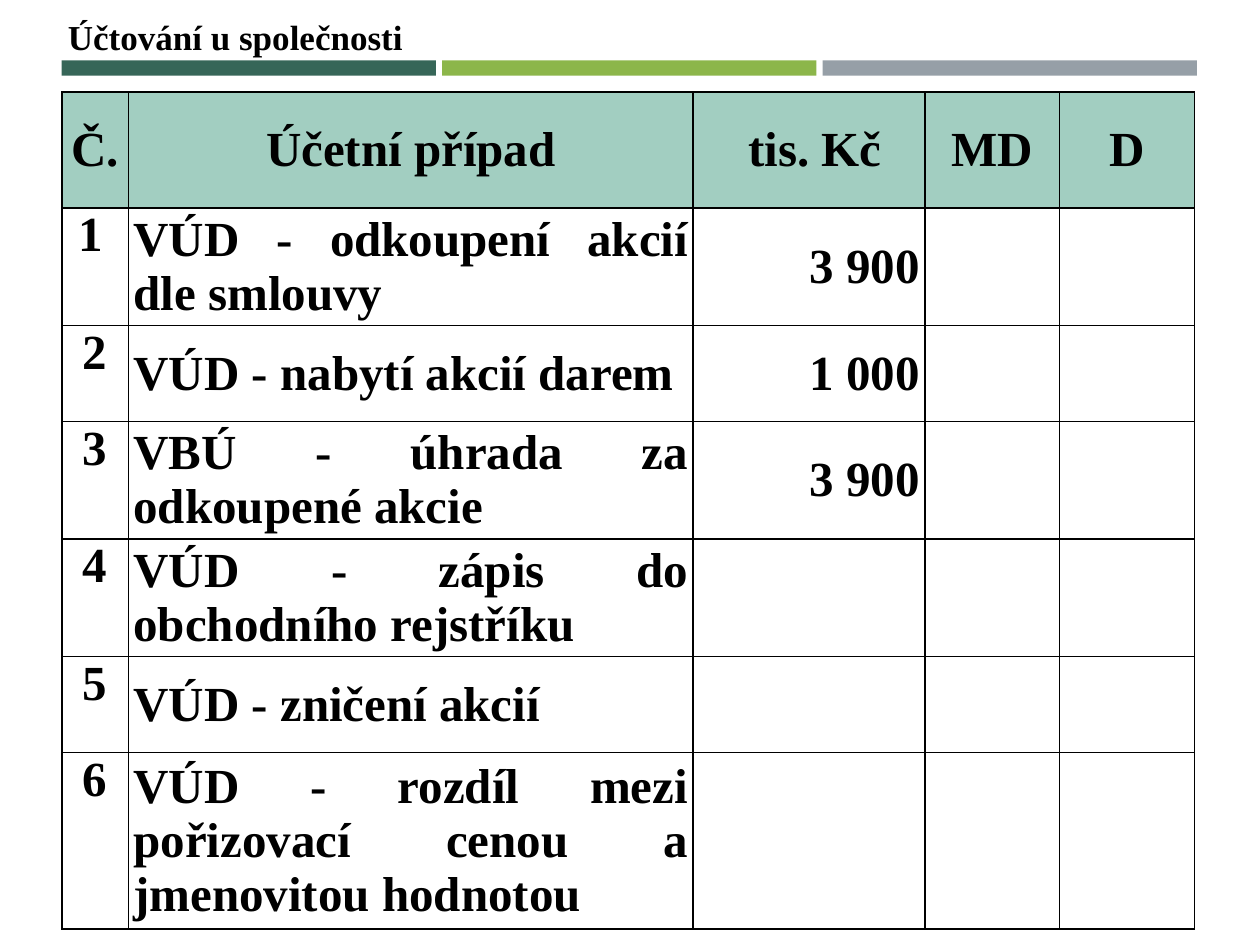
from lxml import etree
from pptx import Presentation
from pptx.dml.color import RGBColor
from pptx.enum.shapes import MSO_SHAPE
from pptx.enum.text import MSO_ANCHOR, MSO_AUTO_SIZE, PP_ALIGN
from pptx.oxml.ns import qn
from pptx.util import Inches, Pt

RECTANGLE = MSO_SHAPE.RECTANGLE
TOP, MIDDLE = MSO_ANCHOR.TOP, MSO_ANCHOR.MIDDLE
LEFT, CENTER, RIGHT, JUSTIFY = (
    PP_ALIGN.LEFT, PP_ALIGN.CENTER, PP_ALIGN.RIGHT, PP_ALIGN.JUSTIFY)
FIT_SHAPE = MSO_AUTO_SIZE.SHAPE_TO_FIT_TEXT

WIDTH, HEIGHT = 10, 7.5
FONT, BLACK, HEADER_FILL = "Times New Roman", "000000", "A2CEC1"
BAR_COLORS = ["366658", "8CB64A", "969FA7"]
MARGIN = 0.49

COLUMN_WIDTHS = [0.53, 4.48, 1.84, 1.07, 1.07]
ROW_HEIGHTS = [0.92, 0.93, 0.76, 0.93, 0.93, 0.76, 1.4]
HEADER = ["Č.", "Účetní případ", " tis. Kč", "MD", "D"]
ENTRIES = [
    [" 1", "VÚD - odkoupení akcií dle smlouvy", "3 900", "", ""],
    ["2", "VÚD - nabytí akcií darem", "1 000", "", ""],
    ["3", "VBÚ - úhrada za odkoupené akcie", "3 900", "", ""],
    ["4", "VÚD - zápis do obchodního rejstříku", "", "", ""],
    ["5", "VÚD - zničení akcií", "", "", ""],
    ["6", "VÚD - rozdíl mezi pořizovací cenou a jmenovitou hodnotou", "", "", ""],
]
BODY_ALIGNMENTS = [CENTER, JUSTIFY, RIGHT, CENTER, CENTER]


def color(value):
    return RGBColor.from_string(value)


class SlideBuilder:
    """Holds the text style and the current slide; lengths are shares of the slide."""

    def __init__(self, presentation):
        self.presentation = presentation
        self.slide = presentation.slides.add_slide(presentation.slide_layouts[6])

    def box(self, left, top, width, height):
        across, down = self.presentation.slide_width, self.presentation.slide_height
        return (int(left * across), int(top * down),
                int(width * across), int(height * down))

    def add_text(self, paragraph, text, size, alignment=LEFT):
        paragraph.alignment = alignment
        run = paragraph.add_run()
        run.text = text
        run.font.name = FONT
        run.font.size = Pt(size)
        run.font.bold = True
        run.font.color.rgb = color(BLACK)

    def bar(self, left, top, width, height, fill):
        shape = self.slide.shapes.add_shape(RECTANGLE, *self.box(left, top, width, height))
        shape.shadow.inherit = False
        shape.fill.solid()
        shape.fill.fore_color.rgb = color(fill)
        shape.line.fill.background()

    def title(self, left, top, width, height, text):
        shape = self.slide.shapes.add_textbox(*self.box(left, top, width, height))
        frame = shape.text_frame
        frame.word_wrap = False
        frame.auto_size = FIT_SHAPE
        self.add_text(frame.paragraphs[0], text, 20)

    def table(self, left, top, widths, heights):
        bounds = self.box(left, top, sum(widths) / WIDTH, sum(heights) / HEIGHT)
        table = self.slide.shapes.add_table(len(heights), len(widths), *bounds).table
        for column, width in zip(table.columns, widths):
            column.width = Inches(width)
        for row, height in zip(table.rows, heights):
            row.height = Inches(height)
        return table

    def cell(self, cell, text, alignment, anchor, fill=None):
        cell.margin_left = cell.margin_right = Inches(0.04)
        cell.margin_top = cell.margin_bottom = 0
        cell.vertical_anchor = anchor
        if fill:
            cell.fill.solid()
            cell.fill.fore_color.rgb = color(fill)
        else:
            cell.fill.background()
        self.borders(cell)
        if text:
            self.add_text(cell.text_frame.paragraphs[0], text, 28, alignment)

    def borders(self, cell):
        properties = cell._tc.get_or_add_tcPr()
        for position, side in enumerate(["a:lnL", "a:lnR", "a:lnT", "a:lnB"]):
            line = etree.Element(qn(side), w=str(Pt(1)))
            fill = etree.SubElement(line, qn("a:solidFill"))
            etree.SubElement(fill, qn("a:srgbClr"), val=BLACK)
            properties.insert(position, line)


def main():
    presentation = Presentation()
    presentation.slide_width = Inches(WIDTH)
    presentation.slide_height = Inches(HEIGHT)
    builder = SlideBuilder(presentation)

    # Three-colour band under the title
    for index, fill in enumerate(BAR_COLORS):
        builder.bar((MARGIN + index * 3.02) / WIDTH, 0.48 / HEIGHT,
                    2.97 / WIDTH, 0.12 / HEIGHT, fill)

    # Title
    builder.title(0.44 / WIDTH, 0.07 / HEIGHT, 2.88 / WIDTH, 0.44 / HEIGHT,
                  "Účtování u společnosti")

    # Table of accounting entries
    table = builder.table(MARGIN / WIDTH, 0.73 / HEIGHT, COLUMN_WIDTHS, ROW_HEIGHTS)
    for column, text in enumerate(HEADER):
        builder.cell(table.cell(0, column), text, CENTER, MIDDLE, HEADER_FILL)
    for row, entry in enumerate(ENTRIES, start=1):
        for column, text in enumerate(entry):
            alignment = LEFT if (row, column) == (1, 0) else BODY_ALIGNMENTS[column]
            anchor = TOP if column == 0 else MIDDLE
            builder.cell(table.cell(row, column), text, alignment, anchor)

    presentation.save("out.pptx")


if __name__ == "__main__":
    main()
